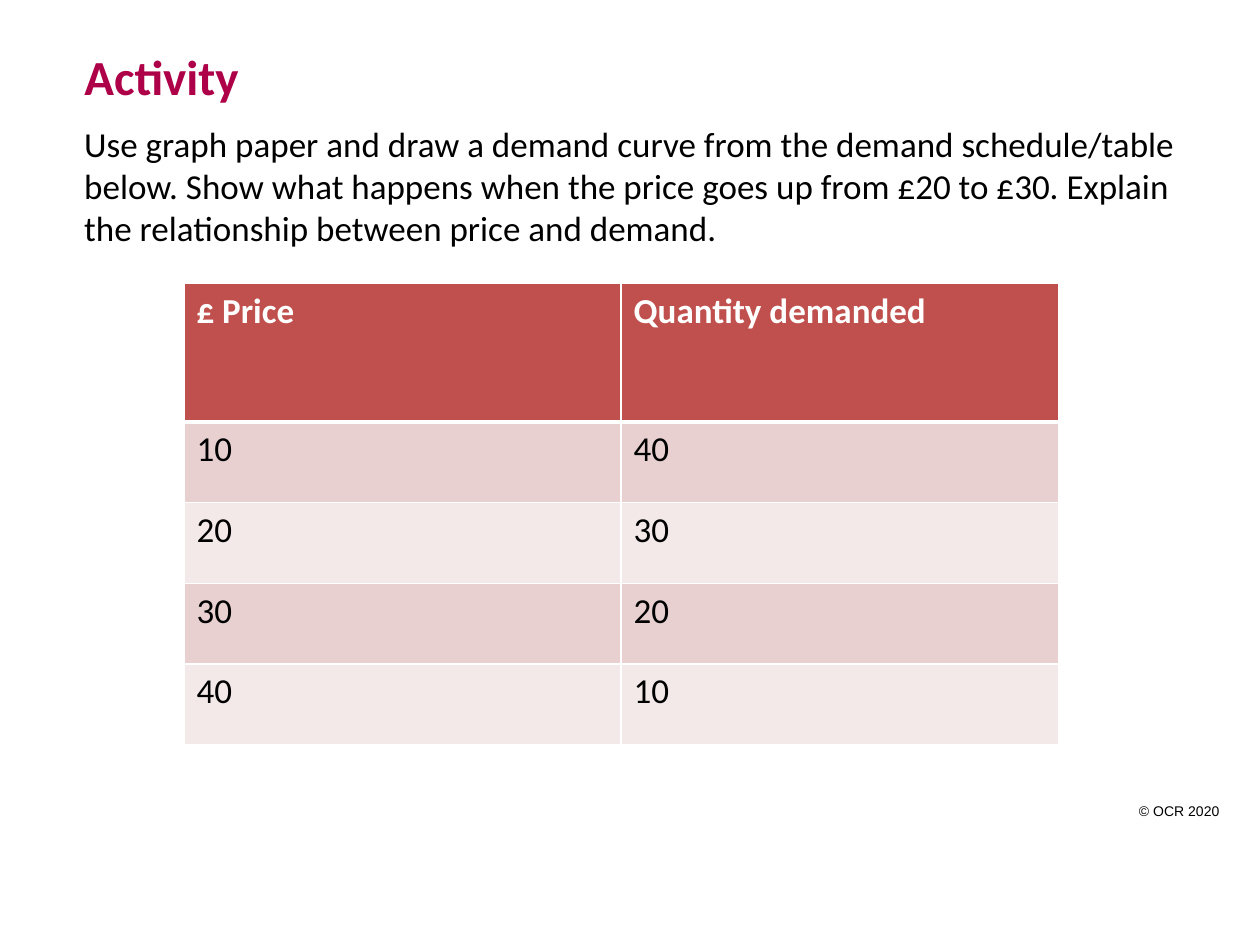
from dataclasses import dataclass

import pptx
import pptx.dml.color
import pptx.enum.text
import pptx.oxml
import pptx.oxml.ns
import pptx.util

Inches = pptx.util.Inches
Pt = pptx.util.Pt
Anchor = pptx.enum.text.MSO_ANCHOR


@dataclass(frozen=True)
class Theme:
    font: str = "Calibri"
    small_font: str = "Arial"
    title: str = "AE0048"
    text: str = "000000"
    white: str = "FFFFFF"
    head: str = "C0504D"
    bands: tuple[str, str] = ("E8D0D0", "F4E9E9")
    title_size: int = 28
    body_size: int = 20
    small_size: int = 8
    rule: int = 1
    head_rule: int = 3


@dataclass(frozen=True)
class Box:
    left: float
    top: float
    width: float
    height: float

    def lengths(self) -> tuple:
        return tuple(map(Inches, (self.left, self.top, self.width, self.height)))


@dataclass(frozen=True)
class Style:
    size: int
    color: str
    font: str = Theme.font
    bold: bool = False


THEME = Theme()
TITLE = Style(THEME.title_size, THEME.title, bold=True)
BODY = Style(THEME.body_size, THEME.text)
HEAD = Style(THEME.body_size, THEME.white, bold=True)
SMALL = Style(THEME.small_size, THEME.text, THEME.small_font)

TASK = (
    "Use graph paper and draw a demand curve from the demand schedule/table below. "
    "Show what happens when the price goes up from £20 to £30. "
    "Explain the relationship between price and demand."
)
DEMAND = [
    ("£ Price", "Quantity demanded"),
    ("10", "40"),
    ("20", "30"),
    ("30", "20"),
    ("40", "10"),
]
HEAD_HEIGHT, ROW_HEIGHT = 1.1, 0.64


def rgb(color: str) -> pptx.dml.color.RGBColor:
    return pptx.dml.color.RGBColor.from_string(color)


def write(frame, text: str, style: Style) -> None:
    frame.text = text
    for para in frame.paragraphs:
        para.alignment = pptx.enum.text.PP_ALIGN.LEFT
        for run in para.runs:
            run.font.name = style.font
            run.font.size = Pt(style.size)
            run.font.bold = style.bold
            run.font.color.rgb = rgb(style.color)


def add_text(slide, box: Box, text: str, style: Style, wrap: bool = True) -> None:
    frame = slide.shapes.add_textbox(*box.lengths()).text_frame
    write(frame, text, style)
    frame.word_wrap = wrap
    frame.auto_size = pptx.enum.text.MSO_AUTO_SIZE.SHAPE_TO_FIT_TEXT


def set_title(slide, box: Box, text: str) -> None:
    title = slide.shapes.title
    title.left, title.top, title.width, title.height = box.lengths()
    write(title.text_frame, text, TITLE)
    title.text_frame.vertical_anchor = Anchor.MIDDLE


def set_edges(cell, top: int, bottom: int) -> None:
    """Draw white cell borders; the schema wants them ahead of the fill."""
    widths = {"lnL": THEME.rule, "lnR": THEME.rule, "lnT": top, "lnB": bottom}
    props = cell._tc.get_or_add_tcPr()
    for place, (tag, width) in enumerate(widths.items()):
        edge = pptx.oxml.parse_xml(
            f'<a:{tag} {pptx.oxml.ns.nsdecls("a")} w="{Pt(width)}">'
            f'<a:solidFill><a:srgbClr val="{THEME.white}"/></a:solidFill></a:{tag}>'
        )
        props.insert(place, edge)


def add_table(slide, box: Box, rows: list[tuple[str, ...]]) -> None:
    table = slide.shapes.add_table(len(rows), len(rows[0]), *box.lengths()).table
    for r, values in enumerate(rows):
        is_head = r == 0
        table.rows[r].height = Inches(HEAD_HEIGHT if is_head else ROW_HEIGHT)
        fill = THEME.head if is_head else THEME.bands[(r - 1) % 2]
        top = THEME.head_rule if r == 1 else THEME.rule
        bottom = THEME.head_rule if is_head else THEME.rule
        for c, value in enumerate(values):
            cell = table.cell(r, c)
            write(cell.text_frame, value, HEAD if is_head else BODY)
            cell.fill.solid()
            cell.fill.fore_color.rgb = rgb(fill)
            set_edges(cell, top, bottom)


def main() -> None:
    deck = pptx.Presentation()
    deck.slide_width, deck.slide_height = Inches(10), Inches(7.5)
    slide = deck.slides.add_slide(deck.slide_layouts.get_by_name("Title Only"))
    set_title(slide, Box(0.57, 0.22, 9, 0.76), "Activity")
    add_text(slide, Box(0.57, 0.92, 9, 1.11), TASK, BODY)
    add_table(slide, Box(1.46, 2.25, 6.94, 3.65), DEMAND)
    add_text(slide, Box(8.94, 6.32, 0.85, 0.24), "© OCR 2020", SMALL, wrap=False)
    deck.save("out.pptx")


if __name__ == "__main__":
    main()
